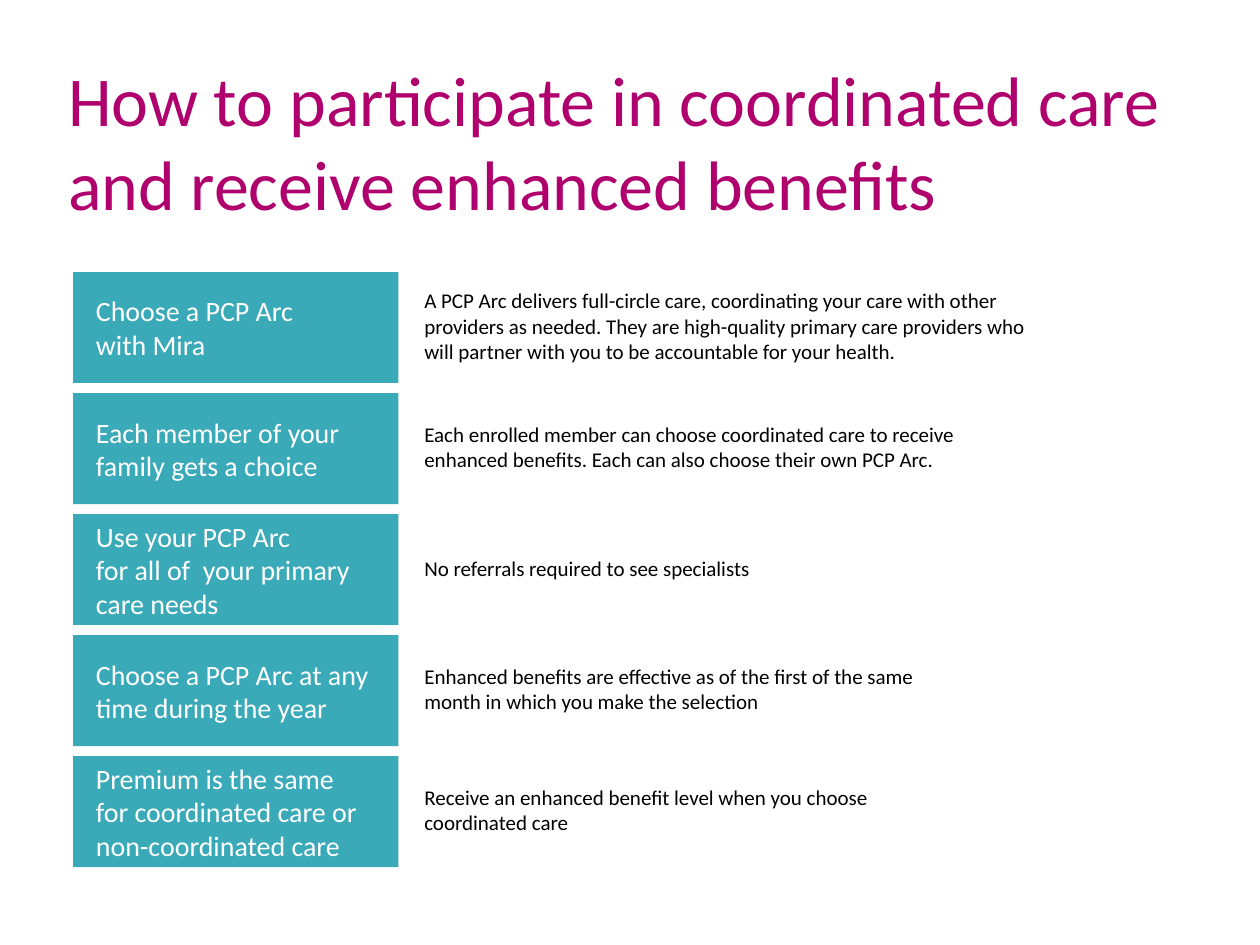
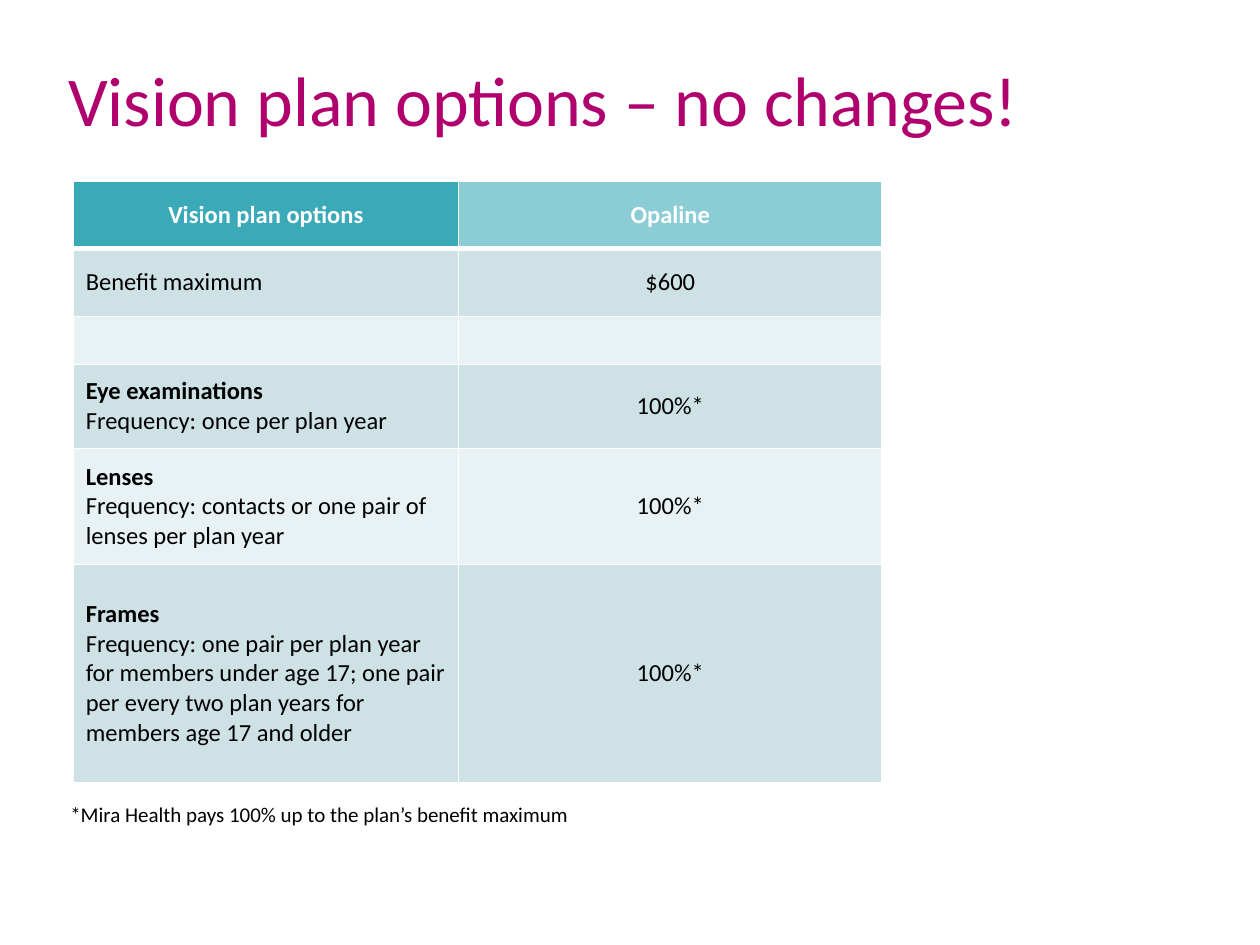
"""Build two benefit slides: coordinated care steps and vision plan options."""
from dataclasses import dataclass

import lxml.etree
import pptx
import pptx.dml.color
import pptx.enum.shapes
import pptx.enum.text
import pptx.oxml.ns
import pptx.util

Pt = pptx.util.Pt
ALIGN = pptx.enum.text.PP_ALIGN
ANCHOR = pptx.enum.text.MSO_ANCHOR
TITLE_ONLY = 5


@dataclass(frozen=True)
class Theme:
    """Colours, font and type sizes shared by the slides."""
    font: str = "Calibri"
    title: str = "B0006D"
    teal: str = "3AA9B8"
    light_teal: str = "8BCCD5"
    band_dark: str = "CEE2E6"
    band_light: str = "E8F1F3"
    white: str = "FFFFFF"
    black: str = "000000"
    title_size: int = 40
    label_size: int = 16
    table_size: int = 14
    note_size: int = 12


THEME = Theme()

TITLE_BOX = (31.7, 28.8, 652.3, 55.4)
STEPS_BOX = (41.8, 155.5, 558, 340)
TABLE_BOX = (41.8, 103.7, 462.2, 343.5)
FOOTNOTE_BOX = (33.1, 454.3, 617, 21.6)

STEPS = [
    ("Choose a PCP Arc\nwith Mira",
     "A PCP Arc delivers full-circle care, coordinating your care with other "
     "providers as needed. They are high-quality primary care providers who "
     "will partner with you to be accountable for your health.", 3, 364.3),
    ("Each member of your family gets a choice",
     "Each enrolled member can choose coordinated care to receive enhanced "
     "benefits. Each can also choose their own PCP Arc.", 2, 322.6),
    ("Use your PCP Arc\nfor all of  your primary care needs",
     "No referrals required to see specialists", 1, 322.6),
    ("Choose a PCP Arc at any time during the year",
     "Enhanced benefits are effective as of the first of the same month in "
     "which you make the selection", 2, 322.6),
    ("Premium is the same\nfor coordinated care or non-coordinated care",
     "Receive an enhanced benefit level when you choose\ncoordinated care", 2, 322.6),
]

COLUMN_SHARES = (3.06, 3.36)
ROW_HEIGHTS = (38.2, 38.9, 27.4, 48.2, 66.2, 124.6)
PLAN_ROWS = [
    ("", "Benefit maximum", "$600"),
    ("", "", ""),
    ("Eye examinations", "Frequency: once per plan year", "100%*"),
    ("Lenses", "Frequency: contacts or one pair of lenses per plan year", "100%*"),
    ("Frames", "Frequency: one pair per plan year for members under age 17; one pair "
     "per every two plan years for members age 17 and older", "100%*"),
]


def rgb(value):
    """Turn a hex string into a colour."""
    return pptx.dml.color.RGBColor.from_string(value)


def write_text(paragraph, text, size=THEME.note_size, color=THEME.black, bold=False,
               align=ALIGN.LEFT):
    """Write formatted text, with a line break at each newline."""
    paragraph.alignment = align
    for number, line in enumerate(text.split("\n")):
        if number:
            paragraph.add_line_break()
        run = paragraph.add_run()
        run.text = line
        run.font.name = THEME.font
        run.font.size = Pt(size)
        run.font.bold = bold
        run.font.color.rgb = rgb(color)


def add_text_box(slide, box, text):
    """Add a wrapping, vertically centred text box."""
    text_frame = slide.shapes.add_textbox(*map(Pt, box)).text_frame
    text_frame.word_wrap = True
    text_frame.vertical_anchor = ANCHOR.MIDDLE
    write_text(text_frame.paragraphs[0], text)


def add_titled_slide(presentation, title):
    """Add a title-only slide with its title placed and formatted."""
    slide = presentation.slides.add_slide(presentation.slide_layouts[TITLE_ONLY])
    shape = slide.shapes.title
    shape.left, shape.top, shape.width, shape.height = map(Pt, TITLE_BOX)
    text_frame = shape.text_frame
    text_frame.word_wrap = True
    text_frame.auto_size = pptx.enum.text.MSO_AUTO_SIZE.NONE
    text_frame.vertical_anchor = ANCHOR.TOP
    write_text(text_frame.paragraphs[0], title, size=THEME.title_size, color=THEME.title)
    return slide


def add_step_label(slide, box, text):
    """Add a teal rectangle that names a step."""
    shape = slide.shapes.add_shape(pptx.enum.shapes.MSO_SHAPE.RECTANGLE, *map(Pt, box))
    shape.shadow.inherit = False
    shape.fill.solid()
    shape.fill.fore_color.rgb = rgb(THEME.teal)
    shape.line.fill.background()
    text_frame = shape.text_frame
    text_frame.word_wrap = True
    text_frame.margin_left, text_frame.margin_right = Pt(13), Pt(5)
    text_frame.margin_top = text_frame.margin_bottom = 0
    text_frame.vertical_anchor = ANCHOR.MIDDLE
    write_text(text_frame.paragraphs[0], text, size=THEME.label_size, color=THEME.white)


def add_steps(slide, box):
    """Stack the step labels with their descriptions beside them."""
    left, top, width, height = box
    gap, label_width = 5.8, 185.8
    row_height = (height - gap * (len(STEPS) - 1)) / len(STEPS)
    for number, (label, description, lines, text_width) in enumerate(STEPS):
        row_top = top + number * (row_height + gap)
        add_step_label(slide, (left, row_top, label_width, row_height), label)
        text_height = 7.2 + 14.4 * lines
        text_top = row_top + (row_height - text_height) / 2 - 1
        add_text_box(slide, (left + label_width + 7.8, text_top, text_width, text_height),
                     description)


def format_cell(cell, fill, top_width, bottom_width):
    """Give a cell white borders, a solid fill and a middle anchor."""
    qualify = pptx.oxml.ns.qn
    properties = cell._tc.get_or_add_tcPr()
    for side, width in (("L", 1), ("R", 1), ("T", top_width), ("B", bottom_width)):
        line = lxml.etree.SubElement(properties, qualify("a:ln" + side), w=str(Pt(width)))
        solid = lxml.etree.SubElement(line, qualify("a:solidFill"))
        lxml.etree.SubElement(solid, qualify("a:srgbClr"), val=THEME.white)
    cell.fill.solid()
    cell.fill.fore_color.rgb = rgb(fill)
    cell.vertical_anchor = ANCHOR.MIDDLE


def write_cell(cell, lines, **text_format):
    """Write (text, bold) lines as paragraphs, keeping an empty cell at table size."""
    paragraph = cell.text_frame.paragraphs[0]
    filled = [line for line in lines if line[0]]
    for number, (text, bold) in enumerate(filled):
        if number:
            paragraph = cell.text_frame.add_paragraph()
        write_text(paragraph, text, size=THEME.table_size, bold=bold, **text_format)
    if not filled:
        lxml.etree.SubElement(paragraph._p, pptx.oxml.ns.qn("a:endParaRPr"),
                              sz=str(THEME.table_size * 100))


def add_plan_table(slide, box):
    """Add the vision plan table with a header and banded rows."""
    width = box[2]
    table = slide.shapes.add_table(len(ROW_HEIGHTS), len(COLUMN_SHARES), *map(Pt, box)).table
    for column, share in zip(table.columns, COLUMN_SHARES):
        column.width = Pt(width * share / sum(COLUMN_SHARES))
    for row, height in zip(table.rows, ROW_HEIGHTS):
        row.height = Pt(height)
    headers = (("Vision plan options", THEME.teal), ("Opaline", THEME.light_teal))
    for column, (text, fill) in enumerate(headers):
        cell = table.cell(0, column)
        format_cell(cell, fill, 1, 3)
        write_cell(cell, [(text, True)], color=THEME.white, align=ALIGN.CENTER)
    for number, (heading, detail, value) in enumerate(PLAN_ROWS, start=1):
        fill = THEME.band_dark if number % 2 else THEME.band_light
        name_cell, value_cell = table.cell(number, 0), table.cell(number, 1)
        for cell in (name_cell, value_cell):
            format_cell(cell, fill, 3 if number == 1 else 1, 1)
        write_cell(name_cell, [(heading, True), (detail, False)])
        write_cell(value_cell, [(value, False)], align=ALIGN.CENTER)


def main():
    """Build and save the presentation."""
    presentation = pptx.Presentation()
    presentation.slide_width, presentation.slide_height = Pt(720), Pt(540)
    slide = add_titled_slide(
        presentation, "How to participate in coordinated care and receive enhanced benefits")
    add_steps(slide, STEPS_BOX)
    slide = add_titled_slide(presentation, "Vision plan options – no changes!")
    add_plan_table(slide, TABLE_BOX)
    add_text_box(slide, FOOTNOTE_BOX,
                 "*Mira Health pays 100% up to the plan’s benefit maximum")
    presentation.save("out.pptx")


if __name__ == "__main__":
    main()
